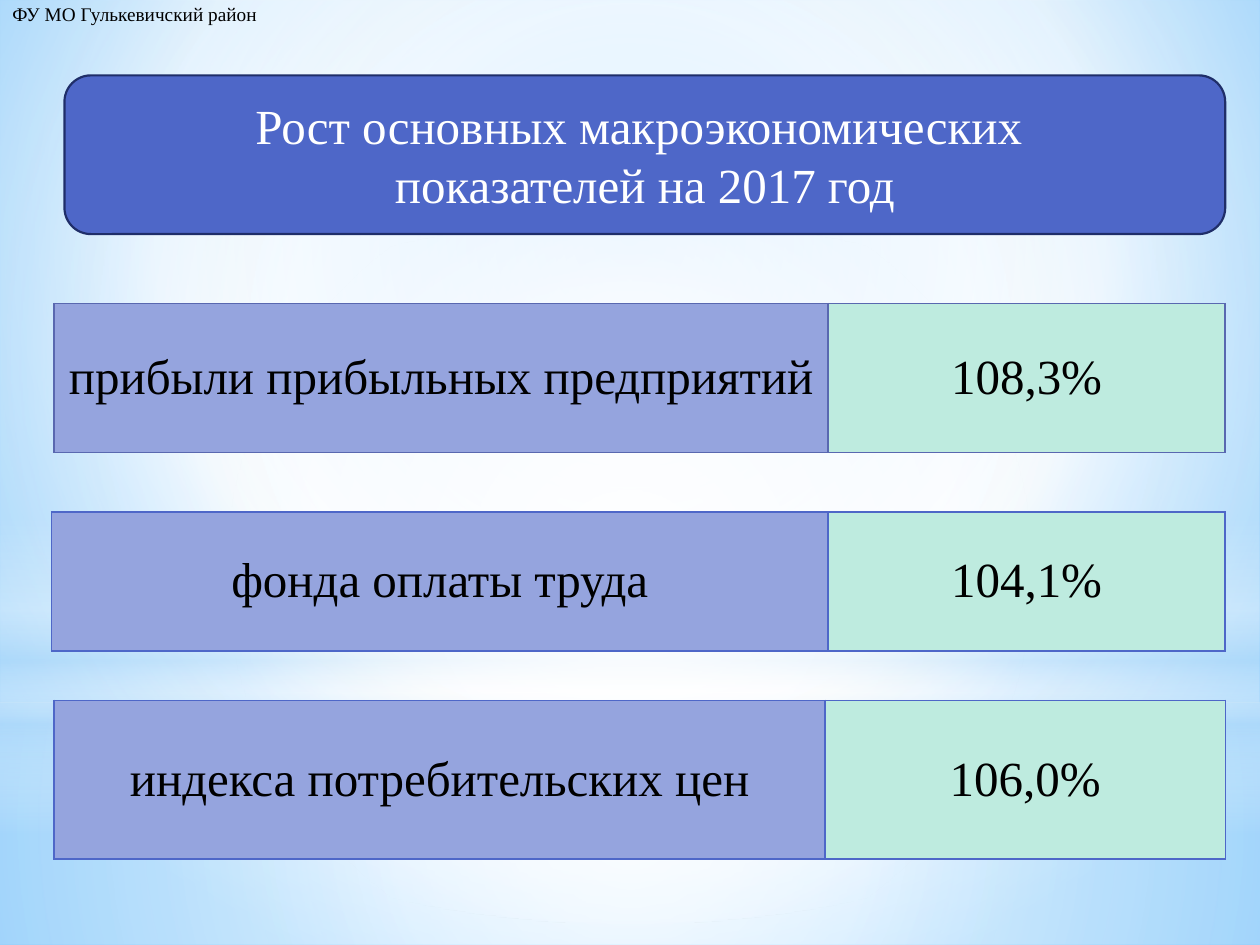
"""Builds a slide on the growth of the main macroeconomic indicators in 2017."""
from lxml import etree
from pptx import Presentation
from pptx.dml.color import RGBColor
from pptx.enum.shapes import MSO_SHAPE
from pptx.enum.text import MSO_ANCHOR, MSO_AUTO_SIZE, PP_ALIGN
from pptx.oxml.ns import qn
from pptx.util import Cm, Pt

RECT, OVAL, ROUNDED = MSO_SHAPE.RECTANGLE, MSO_SHAPE.OVAL, MSO_SHAPE.ROUNDED_RECTANGLE
MIDDLE, CENTER, LEFT = MSO_ANCHOR.MIDDLE, PP_ALIGN.CENTER, PP_ALIGN.LEFT
TITLE_ONLY = 5

DEPARTMENT = "ФУ МО Гулькевичский район"
TITLE = ["Рост основных макроэкономических ", "показателей на 2017 год"]
INDICATORS = [
    {"name": "прибыли прибыльных предприятий", "growth": "108,3%", "border": "5968B0",
     "left": 1.09, "top": 6.12, "height": 3, "split": 16.69},
    {"name": "фонда оплаты труда", "growth": "104,1%", "border": "4E67C8",
     "left": 1.04, "top": 10.32, "height": 2.8, "split": 16.69},
    {"name": "индекса потребительских цен", "growth": "106,0%", "border": "4E67C8",
     "left": 1.09, "top": 14.12, "height": 3.2, "split": 16.63},
]

THEME = {
    "font": "Times New Roman", "body_size": 28, "note_size": 11,
    "text": "000000", "title_text": "FFFFFF", "title_fill": "4E67C8",
    "title_line": "1F2E69", "name_fill": "95A4DE", "growth_fill": "BEEBDF",
}
WIDTH, HEIGHT, RIGHT = 25.4, 19.05, 24.7
TITLE_BOX = (1.3, 1.52, 23.4, 3.2)

CENTERED = (50, 50, 50, 50)
BACKDROP = [(0, "9ED5FF", 100), (60, "FFFFFF", 100), (100, "5BB9FF", 100)]
GLOWS = [
    (RECT, (0, 14.17, WIDTH, 4.88), CENTERED,
     [(0, "FFFFFF", 91), (37, "FFFFFF", 76), (100, "B4DCFA", 79)]),
    (RECT, (0, 0, WIDTH, 14.17), CENTERED,
     [(0, "FFFFFF", 89), (48, "FFFFFF", 62), (100, "B4DCFA", 79)]),
    (RECT, (0, 10.46, WIDTH, 6.35), None,
     [(0, "FFFFFF", 0), (29, "FFFFFF", 30), (45, "B4DCFA", 40),
      (55, "FFFFFF", 26), (65, "B4DCFA", 60), (100, "FFFFFF", 0)]),
    (OVAL, (0, 4.45, WIDTH, 14.17), CENTERED,
     [(0, "FFFFFF", 100), (56, "FFFFFF", 0)]),
]


def lengths(box):
    return [Cm(value) for value in box]


def add_part(parent, tag, **values):
    return etree.SubElement(parent, qn(tag), {key: str(value) for key, value in values.items()})


def set_gradient(fill, owner, stops, focus):
    fill.solid()
    solid = owner.find(".//" + qn("a:solidFill"))
    gradient = etree.Element(qn("a:gradFill"), rotWithShape="1")
    stop_list = add_part(gradient, "a:gsLst")
    for position, color, opacity in stops:
        stop = add_part(stop_list, "a:gs", pos=position * 1000)
        shade = add_part(stop, "a:srgbClr", val=color)
        if opacity < 100:
            add_part(shade, "a:alpha", val=opacity * 1000)
    if focus:
        circle = add_part(gradient, "a:path", path="circle")
        edges = {side: value * 1000 for side, value in zip("ltrb", focus)}
        add_part(circle, "a:fillToRect", **edges)
    else:
        add_part(gradient, "a:lin", ang=90 * 60000, scaled=0)
    solid.getparent().replace(solid, gradient)


def write(frame, lines, size, color, align):
    for number, line in enumerate(lines):
        paragraph = frame.paragraphs[0] if number == 0 else frame.add_paragraph()
        paragraph.alignment = align
        run = paragraph.add_run()
        run.text = line
        for key, value in {"name": THEME["font"], "size": Pt(size)}.items():
            setattr(run.font, key, value)
        run.font.color.rgb = RGBColor.from_string(color)


def set_borders(cell, color):
    properties = cell._tc.get_or_add_tcPr()
    for place, side in enumerate("LRTB"):
        border = etree.Element(qn("a:ln" + side), w=str(Pt(1)))
        add_part(add_part(border, "a:solidFill"), "a:srgbClr", val=color)
        properties.insert(place, border)


def add_backdrop(slide):
    set_gradient(slide.background.fill, slide._element, BACKDROP, (20, 10, 20, 60))
    for outline, box, focus, stops in GLOWS:
        glow = slide.shapes.add_shape(outline, *lengths(box))
        glow.shadow.inherit = False
        set_gradient(glow.fill, glow._element, stops, focus)
        glow.line.fill.background()


def add_department(slide):
    frame = slide.shapes.add_textbox(*lengths((0, -0.08, 5.54, 0.73))).text_frame
    frame.word_wrap = False
    frame.auto_size = MSO_AUTO_SIZE.SHAPE_TO_FIT_TEXT
    write(frame, [DEPARTMENT], THEME["note_size"], THEME["text"], LEFT)


def add_title(slide):
    panel = slide.shapes.add_shape(ROUNDED, *lengths(TITLE_BOX))
    panel.shadow.inherit = False
    panel.fill.solid()
    panel.fill.fore_color.rgb = RGBColor.from_string(THEME["title_fill"])
    panel.line.color.rgb = RGBColor.from_string(THEME["title_line"])
    panel.line.width = Pt(1.25)
    title = slide.shapes.title
    for key, value in zip(("left", "top", "width", "height"), lengths(TITLE_BOX)):
        setattr(title, key, value)
    frame = title.text_frame
    for key, value in {"vertical_anchor": MIDDLE, "word_wrap": True,
                       "auto_size": MSO_AUTO_SIZE.NONE}.items():
        setattr(frame, key, value)
    write(frame, TITLE, THEME["body_size"], THEME["title_text"], CENTER)
    panel._element.addnext(title._element)


def add_indicator(slide, indicator):
    left, split = indicator["left"], indicator["split"]
    box = (left, indicator["top"], RIGHT - left, indicator["height"])
    table = slide.shapes.add_table(1, 2, *lengths(box)).table
    table.first_row = table.horz_banding = False
    columns = [("name", split - left), ("growth", RIGHT - split)]
    for number, (part, width) in enumerate(columns):
        table.columns[number].width = Cm(width)
        cell = table.cell(0, number)
        cell.vertical_anchor = MIDDLE
        cell.fill.solid()
        cell.fill.fore_color.rgb = RGBColor.from_string(THEME[part + "_fill"])
        set_borders(cell, indicator["border"])
        write(cell.text_frame, [indicator[part]], THEME["body_size"], THEME["text"], CENTER)


def main():
    deck = Presentation()
    deck.slide_width, deck.slide_height = lengths((WIDTH, HEIGHT))
    slide = deck.slides.add_slide(deck.slide_layouts[TITLE_ONLY])
    add_backdrop(slide)
    add_department(slide)
    add_title(slide)
    for indicator in INDICATORS:
        add_indicator(slide, indicator)
    deck.save("out.pptx")


if __name__ == "__main__":
    main()
